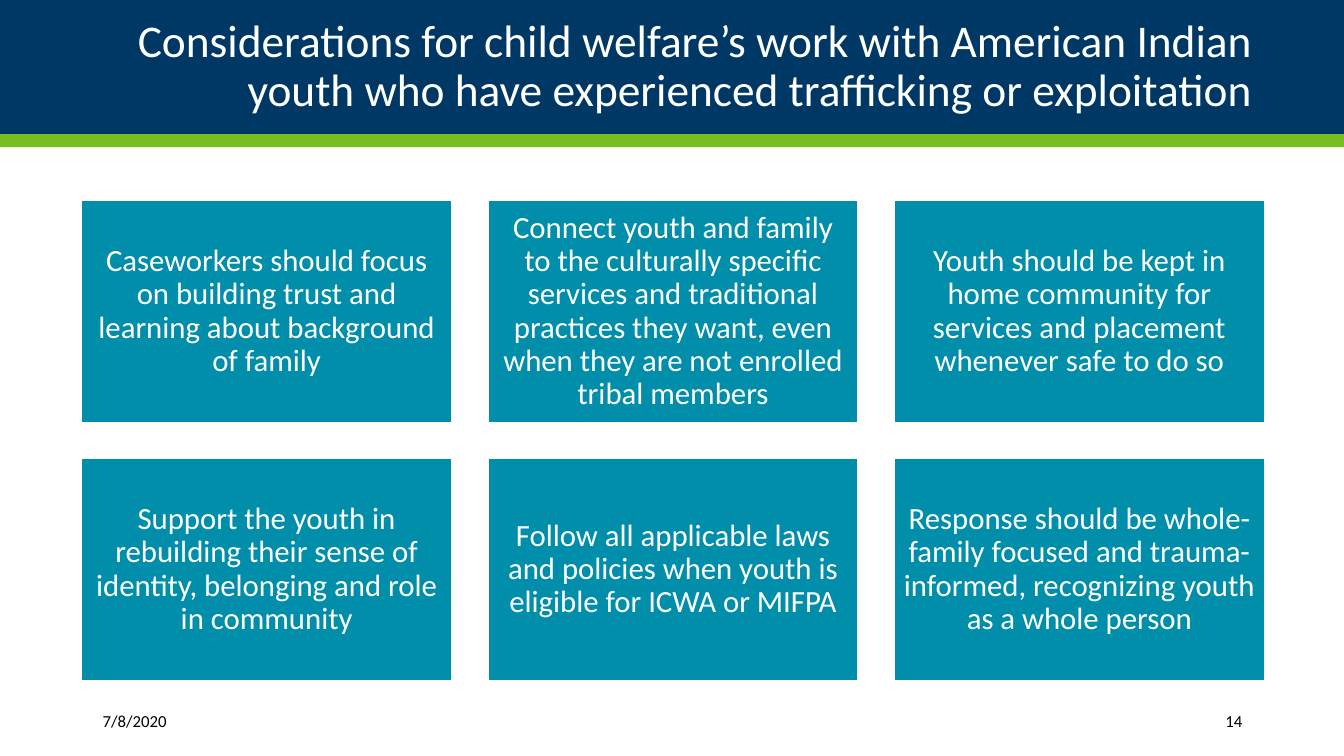
from dataclasses import dataclass

from pptx import Presentation
from pptx.dml.color import RGBColor
from pptx.enum.shapes import MSO_SHAPE as Shape
from pptx.enum.text import MSO_ANCHOR as Anchor, PP_ALIGN as Align
from pptx.util import Inches, Pt

NAVY, GREEN, TEAL = "003865", "78BE21", "008EAA"
WHITE, BLACK = "FFFFFF", "000000"
FONT = "Calibri"
WIDTH, HEIGHT = 13.33, 7.5
COLS = 3
LEFT, TOP = 0.81, 1.99
STEP_X, STEP_Y = 4.03, 2.56
CARD_W, CARD_H = 3.67, 2.2

CARDS = [
    "Caseworkers should focus on building trust and learning about background of family",
    "Connect youth and family to the culturally specific services and traditional "
    "practices they want, even when they are not enrolled tribal members",
    "Youth should be kept in home community for services and placement whenever safe to do so",
    "Support the youth in rebuilding their sense of identity, belonging and role in community",
    "Follow all applicable laws and policies when youth is eligible for ICWA or MIFPA",
    "Response should be whole-family focused and trauma-informed, "
    "recognizing youth as a whole person",
]


@dataclass
class Box:
    left: float
    top: float
    width: float
    height: float

    def place(self) -> list:
        return [Inches(n) for n in (self.left, self.top, self.width, self.height)]


@dataclass
class Label:
    text: str
    size: float
    color: str
    align: Align
    pad_x: float = 0.1
    pad_y: float = 0.05
    spacing: float = 1.0


def rgb(color: str) -> RGBColor:
    return RGBColor.from_string(color)


def write(shape, label: Label) -> None:
    frame = shape.text_frame
    frame.text = label.text
    frame.word_wrap = True
    frame.vertical_anchor = Anchor.MIDDLE
    frame.margin_left = frame.margin_right = Inches(label.pad_x)
    frame.margin_top = frame.margin_bottom = Inches(label.pad_y)
    par = frame.paragraphs[0]
    par.alignment = label.align
    par.line_spacing = label.spacing
    font = par.runs[0].font
    font.name, font.size = FONT, Pt(label.size)
    font.color.rgb = rgb(label.color)


def add_rect(slide, box: Box, fill: str, line: str = ""):
    rect = slide.shapes.add_shape(Shape.RECTANGLE, *box.place())
    rect.shadow.inherit = False
    rect.fill.solid()
    rect.fill.fore_color.rgb = rgb(fill)
    if line:
        rect.line.color.rgb = rgb(line)
        rect.line.width = Pt(0.85)
    else:
        rect.line.fill.background()
    return rect


def add_text(slide, box: Box, label: Label) -> None:
    write(slide.shapes.add_textbox(*box.place()), label)


def main() -> None:
    deck = Presentation()
    deck.slide_width, deck.slide_height = Inches(WIDTH), Inches(HEIGHT)
    slide = deck.slides.add_slide(deck.slide_layouts[6])

    add_rect(slide, Box(0, 0, WIDTH, 1.33), NAVY)
    add_rect(slide, Box(0, 1.33, WIDTH, 0.13), GREEN)
    title = ("Considerations for child welfare’s work with American Indian "
             "youth who have experienced trafficking or exploitation")
    add_text(slide, Box(0.92, 0, 11.5, 1.33),
             Label(title, 32.4, WHITE, Align.RIGHT, pad_x=0, spacing=0.9))

    for i, text in enumerate(CARDS):
        row, col = divmod(i, COLS)
        box = Box(LEFT + col * STEP_X, TOP + row * STEP_Y, CARD_W, CARD_H)
        card = add_rect(slide, box, TEAL, WHITE)
        write(card, Label(text, 22, WHITE, Align.CENTER, 0.09, 0.09, 0.9))

    add_text(slide, Box(0.92, 6.95, 1.49, 0.4), Label("7/8/2020", 12, BLACK, Align.LEFT))
    add_text(slide, Box(10.82, 6.95, 1.6, 0.4), Label("14", 12, BLACK, Align.RIGHT))
    deck.save("out.pptx")


if __name__ == "__main__":
    main()
